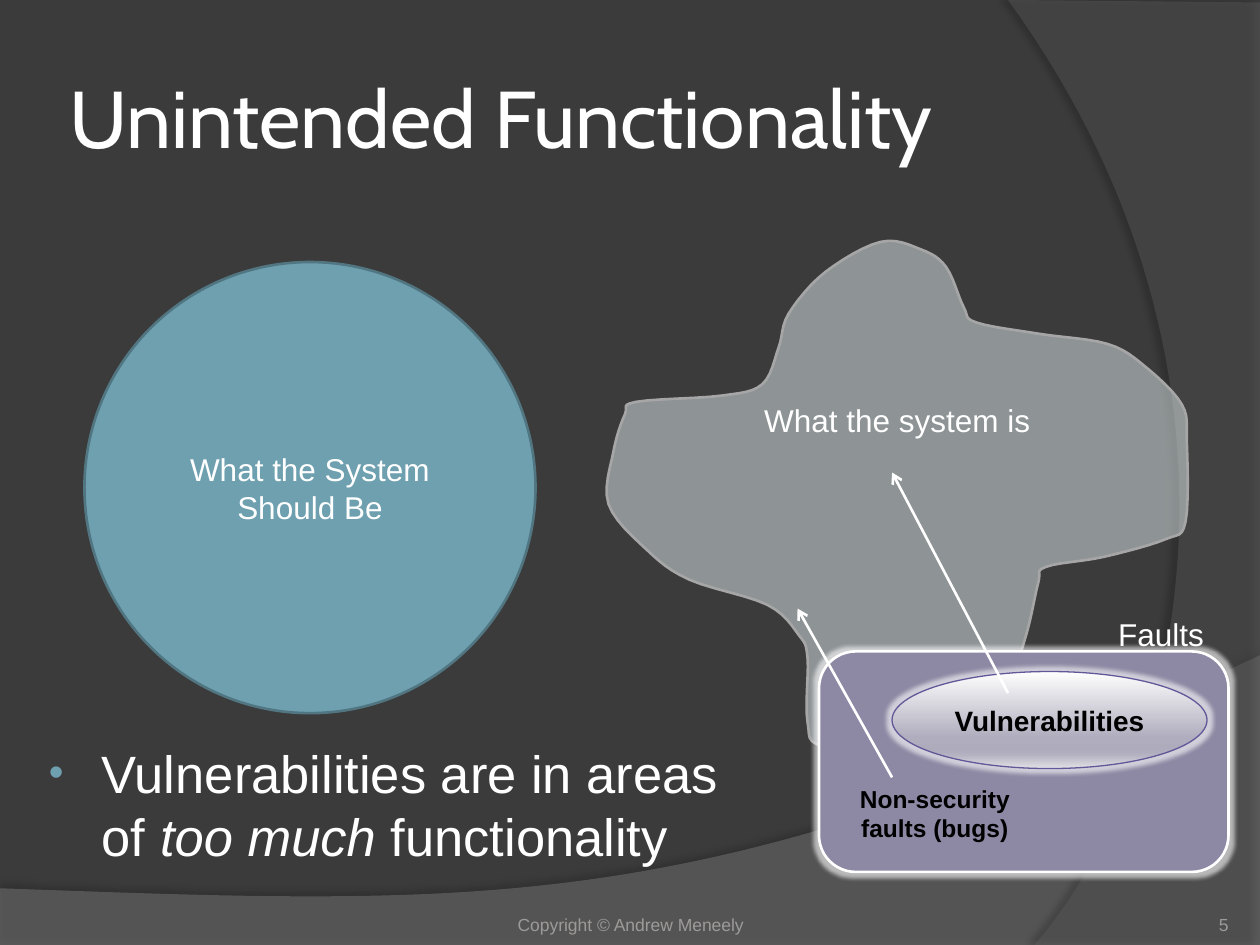
from lxml.etree import SubElement
from pptx import Presentation
from pptx.dml.color import RGBColor
from pptx.enum.shapes import MSO_CONNECTOR, MSO_SHAPE
from pptx.enum.text import MSO_ANCHOR as Anchor, MSO_AUTO_SIZE as AutoSize, PP_ALIGN as Align
from pptx.oxml.ns import qn
from pptx.util import Pt

EMU_PER_PX = 9144  # 100 px to the inch
INSETS = (10, 5, 10, 5)

COLORS = {
    "background": "3B3B3B", "white": "FFFFFF", "black": "000000", "footer": "9D9B9A",
    "swoosh": "7F7F7F", "arc": "5E5E5E", "ideal": "6EA0B0", "ideal line": "517682",
    "actual": "E2ECEF", "actual line": "A6A6A6", "faults": "8D89A4", "oval line": "625899",
}
OVAL_STOPS = [(0, "FEFEFE"), (68, "B0AEBE"), (81, "ADABBC"), (86, "B5B3C2"), (100, "E0DFE4")]

# Bends of the actual system, clockwise from its upper left shoulder
ACTUAL_BENDS = [
    (618, 276), (626, 249), (655, 216), (699, 192), (731, 198), (751, 212), (765, 244),
    (775, 256), (825, 265), (879, 273), (909, 291), (938, 321), (942, 350), (941, 414),
    (925, 428), (876, 442), (830, 450), (824, 463), (813, 509), (789, 572), (739, 601),
    (655, 593), (641, 573), (641, 522), (634, 504), (609, 480), (547, 460), (513, 436),
    (483, 400), (487, 358), (496, 329), (505, 319), (573, 314), (605, 305),
]


def px(value):
    return round(value * EMU_PER_PX)


def rgb(name):
    return RGBColor.from_string(COLORS[name])


def add_effect(element, kind, color, alpha, **attributes):
    """Append a shadow or glow to the effect list of a shape."""
    effect = SubElement(element.spPr.find(qn("a:effectLst")), qn(f"a:{kind}"))
    for name, value in attributes.items():
        effect.set(name, str(value))
    tint = SubElement(effect, qn("a:srgbClr"), val=COLORS[color])
    SubElement(tint, qn("a:alpha"), val=str(alpha * 1000))


def paint(shape, fill, line=None, weight=1.5, alpha=100):
    shape.shadow.inherit = False
    shape.fill.solid()
    shape.fill.fore_color.rgb = rgb(fill)
    if alpha < 100:
        tint = shape._element.spPr.find(f"{qn('a:solidFill')}/{qn('a:srgbClr')}")
        SubElement(tint, qn("a:alpha"), val=str(alpha * 1000))
    if line:
        shape.line.color.rgb = rgb(line)
        shape.line.width = Pt(weight)
    else:
        shape.line.fill.background()


def write(shape, text, size, color="white", bold=False, font="Arial",
          align=Align.CENTER, anchor=Anchor.MIDDLE, insets=INSETS, wrap=True):
    frame = shape.text_frame
    frame.text = text
    frame.auto_size = AutoSize.NONE
    frame.word_wrap = wrap
    frame.vertical_anchor = anchor
    frame.margin_left, frame.margin_top, frame.margin_right, frame.margin_bottom = map(px, insets)
    para = frame.paragraphs[0]
    para.alignment = align
    for span in para.runs:
        span.font.name, span.font.size, span.font.bold = font, Pt(size), bold
        span.font.color.rgb = rgb(color)


def add_label(page, box, text, size, **style):
    label = page.shapes.add_textbox(*map(px, box))
    write(label, text, size, **style)


def add_outline(page, points):
    corners = [(px(x), px(y)) for x, y in points]
    builder = page.shapes.build_freeform(*corners[0])
    builder.add_line_segments(corners[1:], close=True)
    return builder.convert_to_shape()


def curve(start, pull_a, pull_b, end, steps=60):
    """Points along a cubic curve."""
    def at(t, axis):
        s = 1 - t
        return (s**3 * start[axis] + 3 * s * s * t * pull_a[axis]
                + 3 * s * t * t * pull_b[axis] + t**3 * end[axis])
    return [(at(i / steps, 0), at(i / steps, 1)) for i in range(steps + 1)]


def smooth_loop(bends):
    """Points along a closed smooth curve through all the bends."""
    points = []
    for i, here in enumerate(bends):
        before, after, beyond = (bends[(i + k) % len(bends)] for k in (-1, 1, 2))
        pull_a = [h + (a - b) / 6 for h, a, b in zip(here, after, before)]
        pull_b = [a - (c - h) / 6 for h, a, c in zip(here, after, beyond)]
        points += curve(here, pull_a, pull_b, after, steps=6)[:-1]
    return points


def add_backdrop(page, points, fill, alpha, shadow_alpha, distance, degrees):
    shape = add_outline(page, points)
    paint(shape, fill, alpha=alpha)
    add_effect(shape._element, "outerShdw", "black", shadow_alpha,
               blurRad=Pt(4), dist=Pt(distance), dir=degrees * 60000)


def add_preset(page, kind, box, fill, line, weight=1.5):
    shape = page.shapes.add_shape(kind, *map(px, box))
    paint(shape, fill, line, weight)
    return shape


def add_glow(shape):
    add_effect(shape._element, "glow", "white", 60, rad=Pt(5))


def shade(shape, stops):
    """Give a shape a top-to-bottom gradient."""
    shape.fill.gradient()
    shape.fill.gradient_angle = 270
    stop_list = shape._element.spPr.find(f"{qn('a:gradFill')}/{qn('a:gsLst')}")
    stop_list.clear()
    for position, color in stops:
        stop = SubElement(stop_list, qn("a:gs"), pos=str(position * 1000))
        SubElement(stop, qn("a:srgbClr"), val=color)


def add_arrow(page, start, end):
    arrow = page.shapes.add_connector(MSO_CONNECTOR.STRAIGHT, *map(px, start + end))
    arrow.line.color.rgb = rgb("white")
    arrow.line.width = Pt(1.5)
    SubElement(arrow.line._get_or_add_ln(), qn("a:tailEnd"), type="arrow")
    SubElement(arrow._element.spPr, qn("a:effectLst"))


def add_bullet(page, box, spans):
    frame = page.shapes.add_textbox(*map(px, box)).text_frame
    frame.word_wrap = True
    para = frame.paragraphs[0]
    properties = para._p.get_or_add_pPr()
    properties.set("marL", str(px(46)))
    properties.set("indent", str(px(-42)))
    SubElement(SubElement(properties, qn("a:buClr")), qn("a:srgbClr"), val=COLORS["ideal"])
    SubElement(properties, qn("a:buSzPct"), val="80000")
    SubElement(properties, qn("a:buFont"), typeface="Arial")
    SubElement(properties, qn("a:buChar"), char="•")
    for text, italic in spans:
        span = para.add_run()
        span.text = text
        span.font.name, span.font.size, span.font.italic = "Arial", Pt(30), italic
        span.font.color.rgb = rgb("white")


def main():
    deck = Presentation()
    deck.slide_width, deck.slide_height = px(1000), px(750)
    page = deck.slides.add_slide(deck.slide_layouts[5])
    page.background.fill.solid()
    page.background.fill.fore_color.rgb = rgb("background")

    # Backdrop curves
    swoosh = curve((1000, 520), (559, 729), (391, 719), (0, 705))
    add_backdrop(page, [(0, 751), (1000, 751)] + swoosh, "swoosh", 45, 35, 3.5, 270)
    arc = curve((821, 750), (935, 619), (1018, 300), (800, 0))
    add_backdrop(page, [(1000, 2), (1000, 750)] + arc, "arc", 40, 45, 4, 180)

    # Title, bullet and footer
    title = page.shapes.title
    title.left, title.top, title.width, title.height = map(px, (50, 30, 817, 125))
    write(title, "Unintended Functionality", 46, font="Cabin", align=Align.LEFT, insets=(5, 5, 5, 5))
    add_bullet(page, (25, 583, 567, 167), [
        ("Vulnerabilities are in areas of ", False), ("too much ", True), ("functionality", False)])
    footer = {"color": "footer", "anchor": Anchor.BOTTOM}
    add_label(page, (342, 702, 317, 40), "Copyright © Andrew Meneely", 10, insets=(0, 5, 0, 0), **footer)
    add_label(page, (892, 702, 83, 40), "5", 10, align=Align.RIGHT, insets=(0, 0, 0, 0), **footer)

    # Intended and actual system
    ideal = add_preset(page, MSO_SHAPE.OVAL, (67, 208, 358, 358), "ideal", "ideal line")
    write(ideal, "What the System Should Be", 18)
    actual = add_outline(page, smooth_loop(ACTUAL_BENDS))
    paint(actual, "actual", "actual line", alpha=50)
    write(actual, "What the system is", 18, anchor=Anchor.TOP, insets=(10, 127, 10, 5))

    # Faults and the vulnerabilities among them
    faults = add_preset(page, MSO_SHAPE.ROUNDED_RECTANGLE, (650, 517, 325, 175), "faults", "white")
    add_glow(faults)
    oval = add_preset(page, MSO_SHAPE.OVAL, (708, 533, 250, 77), "white", "oval line", 0.75)
    shade(oval, OVAL_STOPS)
    add_glow(oval)
    write(oval, "Vulnerabilities", 16, color="black", bold=True)
    add_label(page, (875, 483, 93, 40), "Faults", 18, anchor=Anchor.TOP, wrap=False)
    add_label(page, (667, 617, 150, 57), "Non-security faults (bugs)", 14,
              color="black", bold=True, anchor=Anchor.TOP)
    add_arrow(page, (800, 550), (708, 375))
    add_arrow(page, (708, 617), (633, 483))

    deck.save("out.pptx")


if __name__ == "__main__":
    main()
